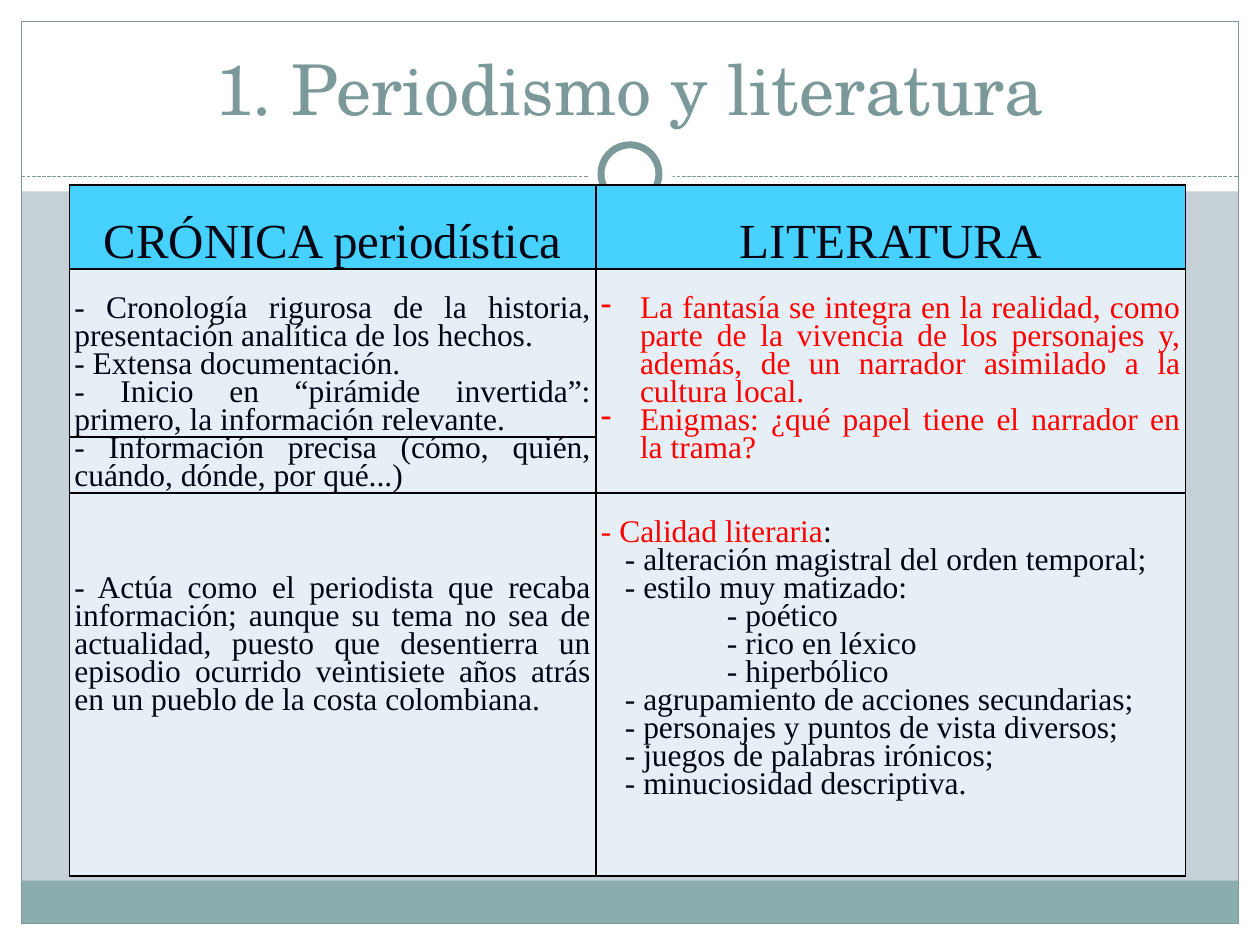
from lxml import etree
from pptx import Presentation
from pptx.dml.color import RGBColor
from pptx.enum.dml import MSO_LINE
from pptx.enum.shapes import MSO_CONNECTOR, MSO_SHAPE
from pptx.enum.text import MSO_ANCHOR, PP_ALIGN
from pptx.oxml.ns import qn
from pptx.util import Inches, Pt

RECTANGLE, OVAL = MSO_SHAPE.RECTANGLE, MSO_SHAPE.OVAL
CENTER, JUSTIFY = PP_ALIGN.CENTER, PP_ALIGN.JUSTIFY
COLORS = {
    "background": "C5D1D7", "white": "FFFFFF", "band": "8CADAE", "accent": "7C999A",
    "header": "47D1FF", "cell": "E7EFF6", "ink": "000514", "red": "FF0000", "border": "000000",
}
TITLE_FONT, TABLE_FONT = "TeX Gyre Schola", "Times New Roman"
LINE_POINTS = 16
LINE_INCHES = LINE_POINTS / 72

TITLE = "1. Periodismo y literatura"

# Backdrop: shape, (left, top, width, height), fill, line width in points
MARGINS = [
    (RECTANGLE, (0, 7.33, 10, 0.17), "white", 0),
    (RECTANGLE, (0, 0, 10, 1.52), "white", 0),
    (RECTANGLE, (0, 0, 0.17, 7.5), "white", 0),
    (RECTANGLE, (9.83, 0, 0.17, 7.5), "white", 0),
    (RECTANGLE, (0.17, 6.99, 9.66, 0.34), "band", 0),
    (RECTANGLE, (0.17, 0.17, 9.66, 7.16), None, 0.75),
]
RING = [
    (OVAL, (4.67, 1.05, 0.67, 0.67), "white", 0),
    (OVAL, (4.77, 1.15, 0.46, 0.46), "white", 4),
]

TABLE_LEFT, TABLE_TOP = 0.55, 1.47
COLUMN_WIDTHS = [4.18, 4.68]
ROW_HEIGHTS = [3 * LINE_INCHES, 6 * LINE_INCHES, 2 * LINE_INCHES, 3.04]

# Each paragraph: indent in inches, then (text, colour) runs
HEADERS = ["CRÓNICA periodística", "LITERATURA"]
CHRONICLE_FACTS = [
    (0, [("- Cronología rigurosa de la historia, presentación analítica de los hechos.", "ink")]),
    (0, [("- Extensa documentación.", "ink")]),
    (0, [("- Inicio en “pirámide invertida”: primero, la información relevante.", "ink")]),
]
CHRONICLE_PRECISION = [
    (0, [("- Información precisa (cómo, quién, cuándo, dónde, por qué...)", "ink")]),
]
CHRONICLE_ROLE = [
    (0, [("- Actúa como el periodista que recaba información; aunque su tema no sea de "
          "actualidad, puesto que desentierra un episodio ocurrido veintisiete años atrás "
          "en un pueblo de la costa colombiana.", "ink")]),
]
LITERATURE_FANTASY = [
    (0.31, [("La fantasía se integra en la realidad, como parte de la vivencia de los "
             "personajes y, además, de un narrador asimilado a la cultura local.", "red")]),
    (0.31, [("Enigmas: ¿qué papel tiene el narrador en la trama?", "red")]),
]
LITERATURE_QUALITY = [(0, [("- Calidad literaria", "red"), (":", "ink")])] + [
    (indent, [(text, "ink")]) for indent, text in [
        (0.19, "- alteración magistral del orden temporal;"),
        (0.19, "- estilo muy matizado:"),
        (1, "- poético"),
        (1, "- rico en léxico"),
        (1, "- hiperbólico"),
        (0.19, "- agrupamiento de acciones secundarias;"),
        (0.19, "- personajes y puntos de vista diversos;"),
        (0.19, "- juegos de palabras irónicos;"),
        (0.19, "- minuciosidad descriptiva."),
    ]
]
# Body cells: row, column, paragraphs, free lines above the text, bulleted
BODY_CELLS = [
    (1, 0, CHRONICLE_FACTS, 1, False),
    (1, 1, LITERATURE_FANTASY, 0, True),
    (2, 0, CHRONICLE_PRECISION, 0, False),
    (3, 0, CHRONICLE_ROLE, 3, False),
    (3, 1, LITERATURE_QUALITY, 1, False),
]


def color(name):
    return RGBColor.from_string(COLORS[name])


def add_backdrop(slide, parts):
    for kind, box, fill, line_width in parts:
        shape = slide.shapes.add_shape(kind, *map(Inches, box))
        shape.shadow.inherit = False
        if fill:
            shape.fill.solid()
            shape.fill.fore_color.rgb = color(fill)
        else:
            shape.fill.background()
        if line_width:
            shape.line.color.rgb = color("accent")
            shape.line.width = Pt(line_width)
        else:
            shape.line.fill.background()


def add_divider(slide):
    divider = slide.shapes.add_connector(
        MSO_CONNECTOR.STRAIGHT, Inches(0.17), Inches(1.4), Inches(9.83), Inches(1.4))
    divider.line.color.rgb = color("accent")
    divider.line.width = Pt(0.75)
    divider.line.dash_style = MSO_LINE.SQUARE_DOT
    etree.SubElement(divider._element.spPr, qn("a:effectLst"))


def add_title(slide):
    title = slide.shapes.title
    slide.shapes._spTree.append(title._element)  # in front of the backdrop
    title.left, title.top, title.width, title.height = map(Inches, (0.33, 0.25, 9.33, 0.83))
    title.text_frame.text = TITLE
    title.text_frame.vertical_anchor = MSO_ANCHOR.BOTTOM
    paragraph = title.text_frame.paragraphs[0]
    paragraph.alignment = CENTER
    font = paragraph.runs[0].font
    font.name, font.size = TITLE_FONT, Pt(40)
    font.color.rgb = color("accent")


def set_borders(cell):
    """Put the four border lines ahead of the fill, as the schema asks."""
    properties = cell._tc.get_or_add_tcPr()
    for index, side in enumerate(("lnL", "lnR", "lnT", "lnB")):
        line = etree.Element(qn(f"a:{side}"), w=str(Pt(1)))
        fill = etree.SubElement(line, qn("a:solidFill"))
        etree.SubElement(fill, qn("a:srgbClr"), val=COLORS["border"])
        properties.insert(index, line)


def set_indent(paragraph, indent, bulleted):
    properties = paragraph._p.get_or_add_pPr()
    properties.set("marL", str(Inches(indent)))
    properties.set("indent", str(-Inches(indent) if bulleted else 0))
    if bulleted:
        etree.SubElement(properties, qn("a:buFontTx"))
        etree.SubElement(properties, qn("a:buChar"), char="-")


def fill_cell(cell, paragraphs, size, alignment, free_lines=0, bulleted=False):
    cell.margin_left = cell.margin_right = Inches(0.04)
    cell.margin_top, cell.margin_bottom = Inches(free_lines * LINE_INCHES), 0
    cell.vertical_anchor = MSO_ANCHOR.MIDDLE if bulleted else MSO_ANCHOR.TOP
    for index, (indent, runs) in enumerate(paragraphs):
        frame = cell.text_frame
        paragraph = frame.add_paragraph() if index else frame.paragraphs[0]
        paragraph.alignment = alignment
        paragraph.line_spacing = Pt(LINE_POINTS)
        set_indent(paragraph, indent, bulleted)
        for text, run_color in runs:
            run = paragraph.add_run()
            run.text = text
            run.font.name, run.font.size = TABLE_FONT, Pt(size)
            run.font.color.rgb = color(run_color)


def add_comparison_table(slide):
    table = slide.shapes.add_table(
        len(ROW_HEIGHTS), len(COLUMN_WIDTHS), Inches(TABLE_LEFT), Inches(TABLE_TOP),
        Inches(sum(COLUMN_WIDTHS)), Inches(sum(ROW_HEIGHTS))).table
    table.first_row = table.horz_banding = False
    for column, width in zip(table.columns, COLUMN_WIDTHS):
        column.width = Inches(width)
    for row_index, (row, height) in enumerate(zip(table.rows, ROW_HEIGHTS)):
        row.height = Inches(height)
        for cell in row.cells:
            cell.fill.solid()
            cell.fill.fore_color.rgb = color("cell" if row_index else "header")
            set_borders(cell)
    table.cell(1, 1).merge(table.cell(2, 1))
    for column_index, header in enumerate(HEADERS):
        fill_cell(table.cell(0, column_index), [(0, [(header, "ink")])], 28, CENTER, 2)
    for row_index, column_index, paragraphs, free_lines, bulleted in BODY_CELLS:
        fill_cell(table.cell(row_index, column_index), paragraphs, 18, JUSTIFY,
                  free_lines, bulleted)


def main():
    presentation = Presentation()
    presentation.slide_width, presentation.slide_height = Inches(10), Inches(7.5)
    slide = presentation.slides.add_slide(presentation.slide_layouts[5])
    slide.background.fill.solid()
    slide.background.fill.fore_color.rgb = color("background")
    add_backdrop(slide, MARGINS)
    add_divider(slide)
    add_backdrop(slide, RING)
    add_title(slide)
    add_comparison_table(slide)
    presentation.save("out.pptx")


if __name__ == "__main__":
    main()
